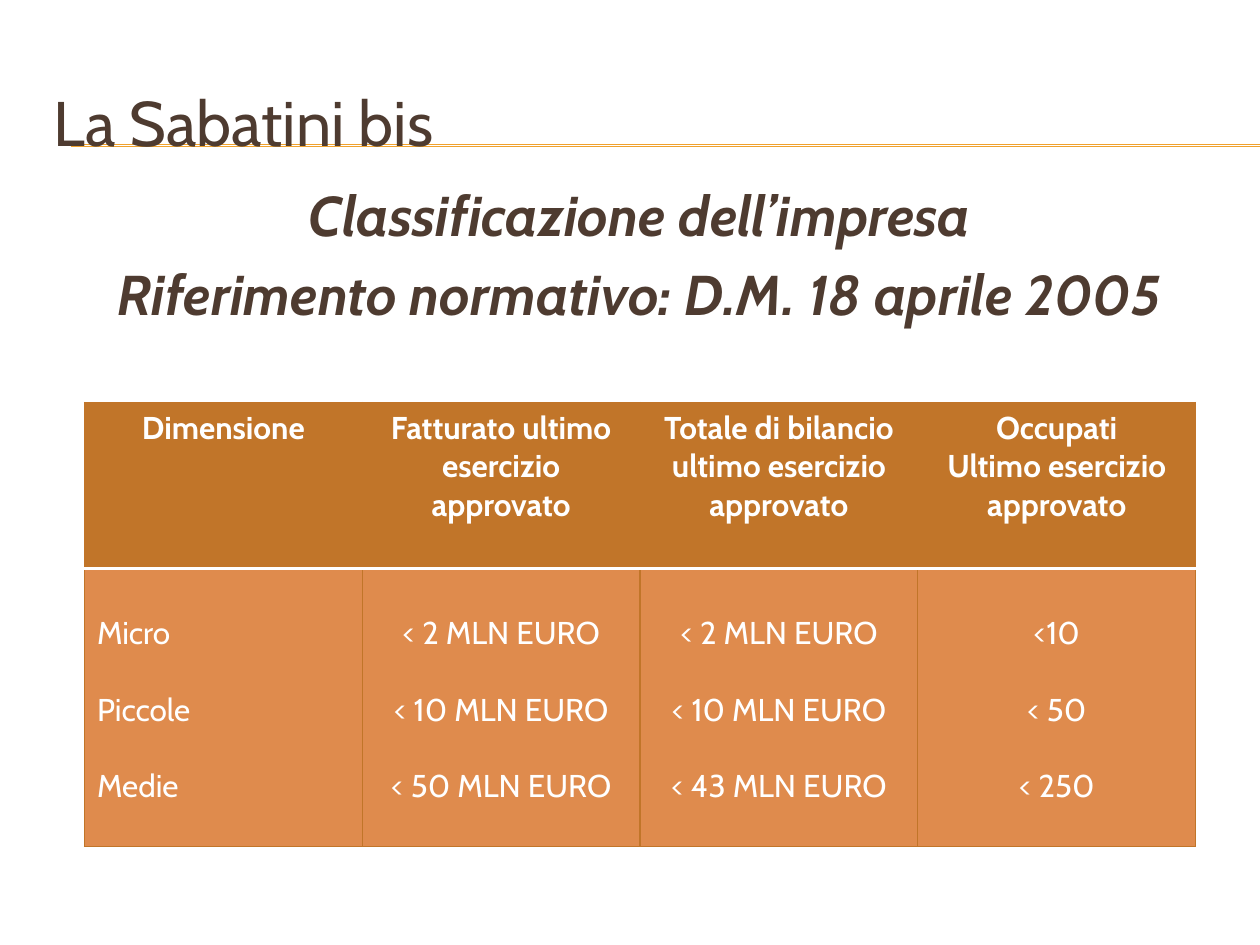
from dataclasses import dataclass

from lxml.etree import SubElement
from pptx import Presentation
from pptx.dml.color import RGBColor
from pptx.enum.shapes import MSO_CONNECTOR as Connector
from pptx.enum.text import MSO_ANCHOR as Anchor, PP_ALIGN as Align
from pptx.oxml import parse_xml
from pptx.oxml.ns import nsdecls, qn
from pptx.util import Inches, Pt


@dataclass(frozen=True)
class Theme:
    font: str = "Cabin"
    ink: str = "4E3B30"
    light: str = "FFFFFF"
    rule: str = "F0A22E"
    head: str = "C17529"
    body: str = "DF8B4D"
    title_size: int = 36
    subtitle_size: int = 32
    table_size: int = 18
    line_gap: int = 22


THEME = Theme()
WIDTH, HEIGHT = 10, 7.5
LEFT, SPAN = 0.033, 0.95
HEADERS = [
    ["Dimensione"],
    ["Fatturato ultimo esercizio approvato"],
    ["Totale di bilancio", "ultimo esercizio approvato"],
    ["Occupati", "Ultimo esercizio approvato"],
]
CLASSES = [
    ["Micro", "Piccole", "Medie"],
    ["< 2 MLN EURO", "< 10 MLN EURO", "< 50 MLN EURO"],
    ["< 2 MLN EURO", "< 10 MLN EURO", "< 43 MLN EURO"],
    ["<10", "< 50", "< 250"],
]


def across(share):
    return Inches(WIDTH * share)


def down(share):
    return Inches(HEIGHT * share)


def write(frame, lines, *, size, color, align=Align.LEFT, bold=False, italic=False, gap=0):
    frame.word_wrap = True
    for index, line in enumerate(lines):
        para = frame.add_paragraph() if index else frame.paragraphs[0]
        para.alignment = align
        if index:
            para.space_before = Pt(gap)
        span = para.add_run()
        span.text = line
        font = span.font
        font.name, font.size = THEME.font, Pt(size)
        font.bold, font.italic = bold, italic
        font.color.rgb = RGBColor.from_string(color)


def add_text(page, top, height, lines, anchor=Anchor.TOP, **style):
    box = page.shapes.add_textbox(across(LEFT), down(top), across(SPAN), down(height))
    box.text_frame.vertical_anchor = anchor
    write(box.text_frame, lines, **style)


def add_rule(page, top):
    rule = page.shapes.add_connector(
        Connector.STRAIGHT, across(0.056), down(top), across(1), down(top))
    rule.line.color.rgb = RGBColor.from_string(THEME.rule)
    rule.line.width = Pt(0.75)
    SubElement(rule.element.spPr, qn("a:effectLst"))


def set_borders(cell, **special):
    properties = cell.fill._xPr
    for index, side in enumerate("LRTB"):
        color, width = special.get(side, (THEME.head, 0.79))
        properties.insert(index, parse_xml(
            f'<a:ln{side} {nsdecls("a")} w="{Pt(width)}"><a:solidFill>'
            f'<a:srgbClr val="{color}"/></a:solidFill></a:ln{side}>'))


def fill_cell(cell, lines, fill, divider, **style):
    cell.fill.solid()
    cell.fill.fore_color.rgb = RGBColor.from_string(fill)
    set_borders(cell, **{divider: (THEME.light, 2)})
    write(cell.text_frame, lines, size=THEME.table_size, color=THEME.light, **style)


def add_size_table(page):
    table = page.shapes.add_table(
        2, len(HEADERS), across(0.067), down(0.426), across(0.882), down(0.47)).table
    for row, share in zip(table.rows, (0.176, 0.294)):
        row.height = down(share)
    for column, (header, values) in enumerate(zip(HEADERS, CLASSES)):
        fill_cell(table.cell(0, column), header, THEME.head, "B",
                  align=Align.CENTER, bold=True)
        cell = table.cell(1, column)
        cell.margin_top = Inches(0.05) + Pt(THEME.line_gap)
        fill_cell(cell, values, THEME.body, "T", gap=THEME.line_gap,
                  align=Align.CENTER if column else Align.LEFT)


def main():
    deck = Presentation()
    deck.slide_width, deck.slide_height = Inches(WIDTH), Inches(HEIGHT)
    page = deck.slides.add_slide(deck.slide_layouts[6])
    for top in (0.153, 0.155):
        add_rule(page, top)
    add_text(page, 0.067, 0.123, ["La Sabatini bis"], anchor=Anchor.MIDDLE,
             size=THEME.title_size, color=THEME.ink)
    add_text(page, 0.185, 0.701,
             ["Classificazione dell’impresa", "Riferimento normativo: D.M. 18 aprile 2005"],
             size=THEME.subtitle_size, color=THEME.ink, align=Align.CENTER,
             bold=True, italic=True, gap=THEME.subtitle_size * 0.2)
    add_size_table(page)
    deck.save("out.pptx")


if __name__ == "__main__":
    main()
